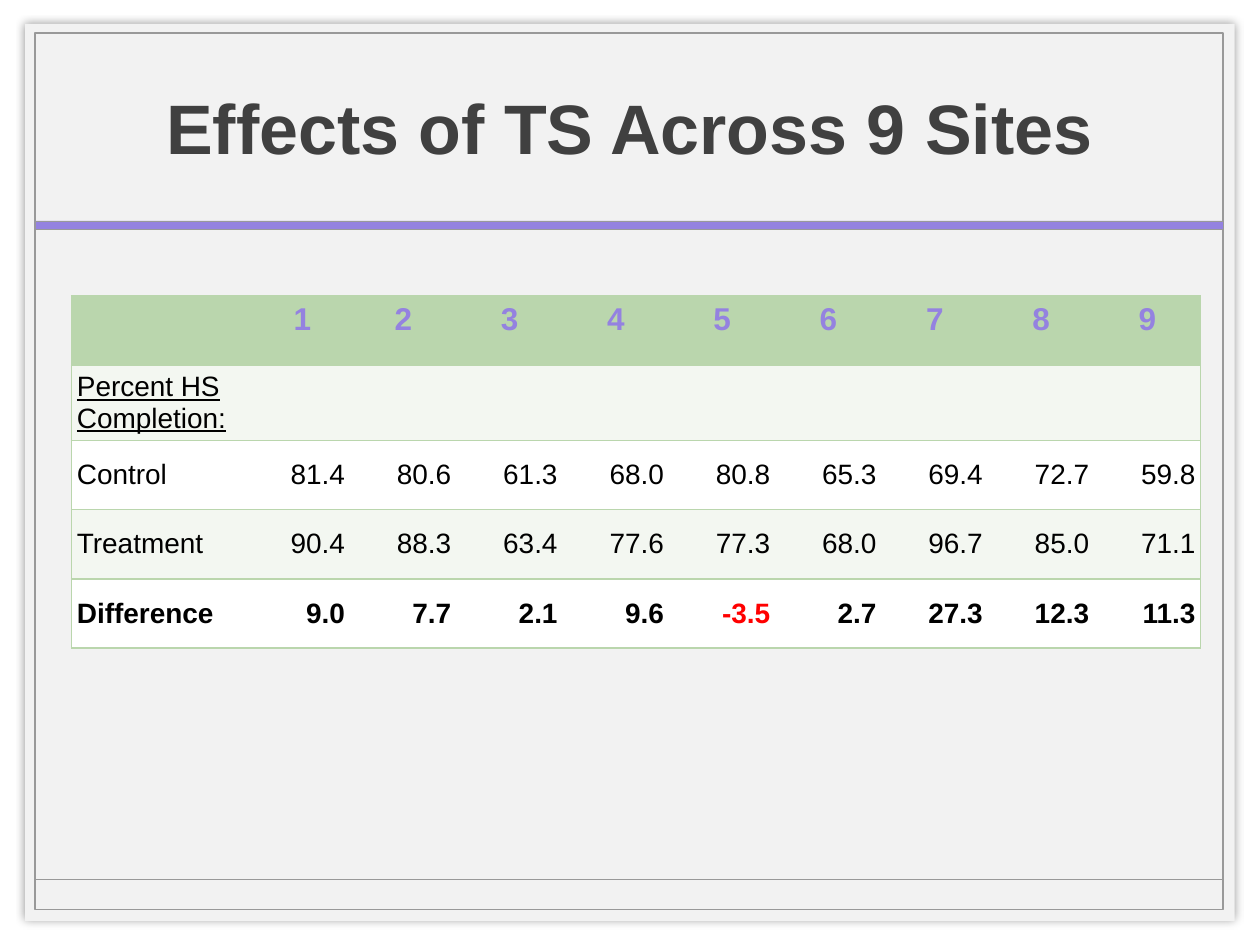
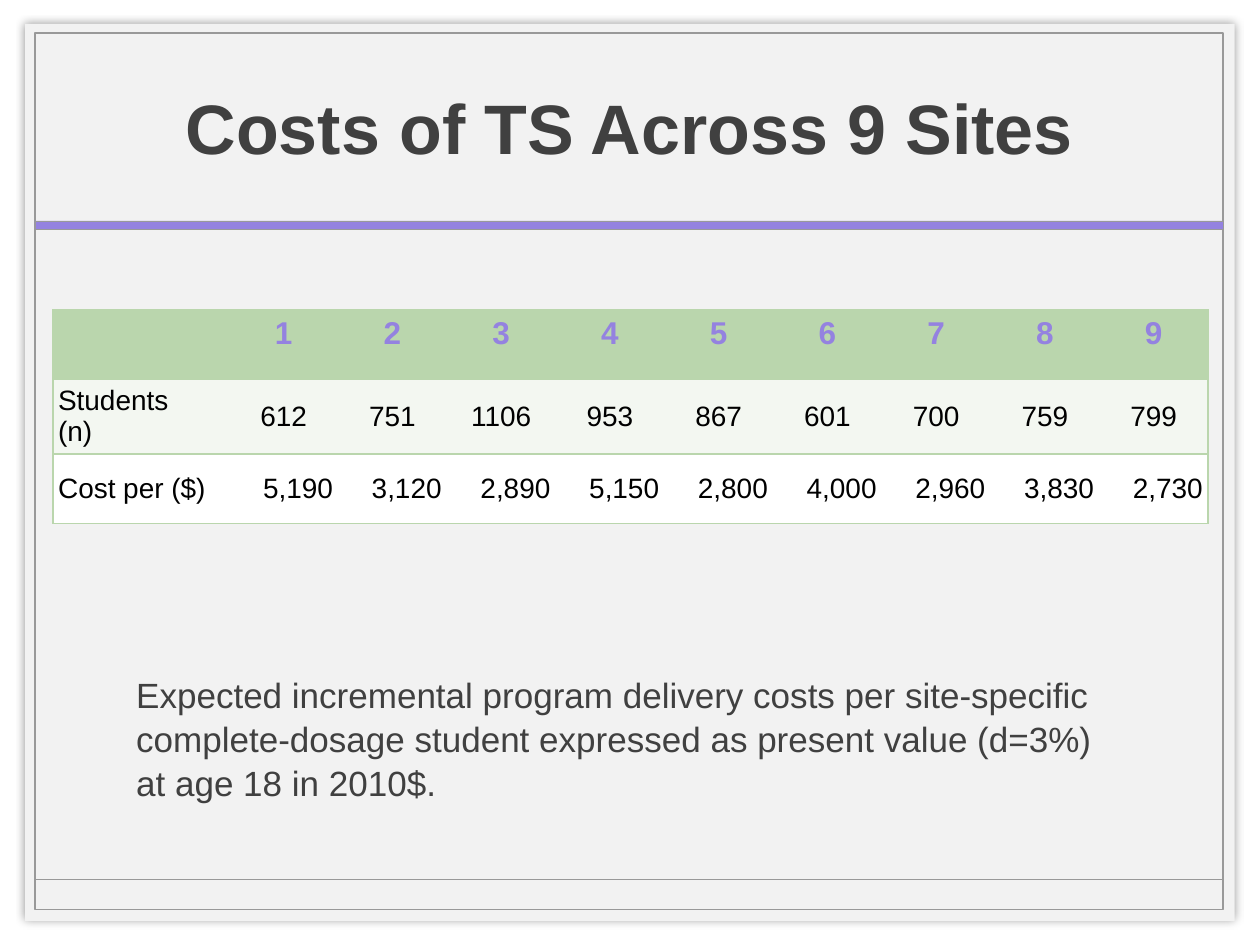
from lxml import etree
from pptx import Presentation
from pptx.dml.color import RGBColor
from pptx.enum.shapes import MSO_CONNECTOR, MSO_SHAPE
from pptx.enum.text import MSO_ANCHOR, MSO_AUTO_SIZE, PP_ALIGN
from pptx.oxml import parse_xml
from pptx.oxml.ns import nsdecls, qn
from pptx.util import Pt

RECTANGLE, STRAIGHT = MSO_SHAPE.RECTANGLE, MSO_CONNECTOR.STRAIGHT
TOP, MIDDLE = MSO_ANCHOR.TOP, MSO_ANCHOR.MIDDLE
LEFT, CENTER, RIGHT = PP_ALIGN.LEFT, PP_ALIGN.CENTER, PP_ALIGN.RIGHT

# Content: table rows are (label, values, row kind)
SITES = [str(site) for site in range(1, 10)]
SLIDES = [
    {
        "title": "Effects of TS Across 9 Sites",
        "table": {"left": 41, "top": 169.2, "widths": [104.4, 54.7] + [60.75] * 8},
        "rows": [
            ("", SITES, "header"),
            ("Percent HS Completion:", [""] * 9, "heading"),
            ("Control", "81.4 80.6 61.3 68.0 80.8 65.3 69.4 72.7 59.8".split(), "value"),
            ("Treatment", "90.4 88.3 63.4 77.6 77.3 68.0 96.7 85.0 71.1".split(), "value"),
            ("Difference", "9.0 7.7 2.1 9.6 -3.5 2.7 27.3 12.3 11.3".split(), "total"),
        ],
    },
    {
        "title": "Costs of TS Across 9 Sites",
        "table": {"left": 30.24, "top": 177.1, "widths": [100.8] + [62.16] * 9},
        "rows": [
            ("", SITES, "header"),
            ("Students\n(n)", "612 751 1106 953 867 601 700 759 799".split(), "count"),
            ("Cost per ($)",
             "5,190 3,120 2,890 5,150 2,800 4,000 2,960 3,830 2,730".split(), "value"),
        ],
        "note": "Expected incremental program delivery costs per site-specific "
                "complete-dosage student expressed as present value (d=3%) "
                "at age 18 in 2010$.",
    },
]

# Shared look
FONT = "Arial"
WHITE, PANEL, GREY, INK = "FFFFFF", "F2F2F2", "999999", "404040"
PURPLE, GREEN, PALE_GREEN = "9482E0", "BAD6AD", "F3F7F1"
BLACK, RED = "000000", "FF0000"
PLAIN_TABLE = "{2D5ABB26-0587-4C30-8999-92F81FD0307C}"
ROW_HEIGHT = 39.6
CELL_MARGINS = {"margin_left": 3, "margin_right": 3, "margin_top": 3.6, "margin_bottom": 3.6}
TIGHT_MARGINS = {"margin_left": 0.7, "margin_right": 0.7, "margin_top": 0.7, "margin_bottom": 0}
ROW_FONTS = {
    "header": {"size": Pt(18), "bold": True},
    "heading": {"size": Pt(16), "underline": True},
    "total": {"size": Pt(16), "bold": True},
}
VALUE_FONT = {"size": Pt(16), "bold": False}

FRAME_LEFT, FRAME_TOP, FRAME_WIDTH, FRAME_HEIGHT = 20, 18.8, 679, 501
FOOTER_Y = 502.6
PANEL_BOX = (14.4, 13.7, 691.2, 512.6)
FRAME_BOX = (FRAME_LEFT, FRAME_TOP, FRAME_WIDTH, FRAME_HEIGHT)
BAND_BOX = (FRAME_LEFT, 126.2, FRAME_WIDTH, 5)
TITLE_BOX = (70.6, 19.4, 578.2, 105.8)
NOTE_BOX = (70.6, 380.2, 576, 98.6)


def color(hex_code):
    return RGBColor.from_string(hex_code)


def apply(target, values):
    for attribute, value in values.items():
        setattr(target, attribute, value)


def write(frame, text, ink, alignment, font, **spacing):
    frame.text = text
    for paragraph in frame.paragraphs:
        apply(paragraph, {"alignment": alignment, **spacing})
        apply(paragraph.font, {"name": FONT, **font})
        for run in paragraph.runs:
            apply(run.font, {"name": FONT, **font})
            run.font.color.rgb = color(ink)


def place(placeholder, box):
    apply(placeholder, dict(zip(("left", "top", "width", "height"), map(Pt, box))))
    placeholder.text_frame.auto_size = MSO_AUTO_SIZE.NONE
    placeholder.text_frame.word_wrap = True


def add_box(slide, box, fill=None, line=None, weight=1):
    shape = slide.shapes.add_shape(RECTANGLE, *map(Pt, box))
    shape.shadow.inherit = False
    if fill:
        shape.fill.solid()
        shape.fill.fore_color.rgb = color(fill)
    else:
        shape.fill.background()
    if line:
        shape.line.color.rgb = color(line)
        shape.line.width = Pt(weight)
    else:
        shape.line.fill.background()
    return shape


def add_frame(slide):
    # Panel with a soft glow-like shadow
    panel = add_box(slide, PANEL_BOX, fill=PANEL)
    effects = panel._element.spPr.find(qn("a:effectLst"))
    effects.append(parse_xml(
        f'<a:outerShdw {nsdecls("a")} blurRad="{Pt(5)}" dist="0" dir="0" algn="ctr" '
        f'rotWithShape="0"><a:srgbClr val="{BLACK}"><a:alpha val="40000"/></a:srgbClr>'
        '</a:outerShdw>'))
    # Outline, footer rule and title band
    add_box(slide, FRAME_BOX, line=GREY)
    footer_rule = slide.shapes.add_connector(
        STRAIGHT, Pt(FRAME_LEFT), Pt(FOOTER_Y), Pt(FRAME_LEFT + FRAME_WIDTH), Pt(FOOTER_Y))
    footer_rule.line.color.rgb = color(GREY)
    footer_rule.line.width = Pt(1)
    etree.SubElement(footer_rule._element.spPr, qn("a:effectLst"))
    add_box(slide, BAND_BOX, fill=PURPLE, line=GREY, weight=0.25)


def add_borders(cell, sides):
    properties = cell._tc.get_or_add_tcPr()
    for position, side in enumerate(sides):
        properties.insert(position, parse_xml(
            f'<a:ln{side} {nsdecls("a")} w="{Pt(1)}"><a:solidFill>'
            f'<a:srgbClr val="{GREEN}"/></a:solidFill></a:ln{side}>'))


def fill_cell(cell, text, kind, row, column, last_column):
    is_header, is_label = kind == "header", column == 0
    fill = GREEN if is_header else PALE_GREEN if row % 2 else WHITE
    cell.fill.solid()
    cell.fill.fore_color.rgb = color(fill)
    cell.vertical_anchor = TOP if is_header else MIDDLE
    margins = TIGHT_MARGINS if kind == "count" and not is_label else CELL_MARGINS
    apply(cell, {side: Pt(size) for side, size in margins.items()})

    ink = PURPLE if is_header else RED if text.startswith("-") else BLACK
    alignment = LEFT if is_label else CENTER if kind in ("header", "count") else RIGHT
    write(cell.text_frame, text, ink, alignment, ROW_FONTS.get(kind, VALUE_FONT))

    outer_side = {0: ["L"], last_column: ["R"]}.get(column, [])
    add_borders(cell, outer_side + ["T", "B"])


def add_site_table(slide, rows, left, top, widths):
    graphic = slide.shapes.add_table(
        len(rows), len(widths), Pt(left), Pt(top),
        Pt(sum(widths)), Pt(ROW_HEIGHT * len(rows)))
    table = graphic.table
    table._tbl.tblPr.find(qn("a:tableStyleId")).text = PLAIN_TABLE
    apply(table, {"first_row": False, "horz_banding": False})
    for column, width in zip(table.columns, widths):
        column.width = Pt(width)
    for r, (label, values, kind) in enumerate(rows):
        table.rows[r].height = Pt(ROW_HEIGHT)
        for c, text in enumerate([label, *values]):
            fill_cell(table.cell(r, c), text, kind, r, c, len(values))


def add_note(placeholder, text):
    place(placeholder, NOTE_BOX)
    write(placeholder.text_frame, text, INK, LEFT, {"size": Pt(20)},
          space_before=Pt(20), line_spacing=1.05)
    properties = placeholder.text_frame.paragraphs[0]._p.get_or_add_pPr()
    apply_indent = {"marL": "0", "indent": "0"}
    for name, value in apply_indent.items():
        properties.set(name, value)
    etree.SubElement(properties, qn("a:buNone"))


def add_title(placeholder, text):
    place(placeholder, TITLE_BOX)
    placeholder.text_frame.vertical_anchor = MIDDLE
    write(placeholder.text_frame, text, INK, CENTER, {"size": Pt(40), "bold": True})


def main():
    deck = Presentation()
    deck.slide_width, deck.slide_height = Pt(720), Pt(540)
    title_and_body, title_only = deck.slide_layouts[1], deck.slide_layouts[5]
    for content in SLIDES:
        slide = deck.slides.add_slide(title_and_body if "note" in content else title_only)
        add_frame(slide)
        add_title(slide.shapes.title, content["title"])
        add_site_table(slide, content["rows"], **content["table"])
        if "note" in content:
            add_note(slide.placeholders[1], content["note"])
        # Bring the placeholders in front of the panel
        for placeholder in list(slide.placeholders):
            slide.shapes._spTree.append(placeholder._element)
    deck.save("out.pptx")


if __name__ == "__main__":
    main()
